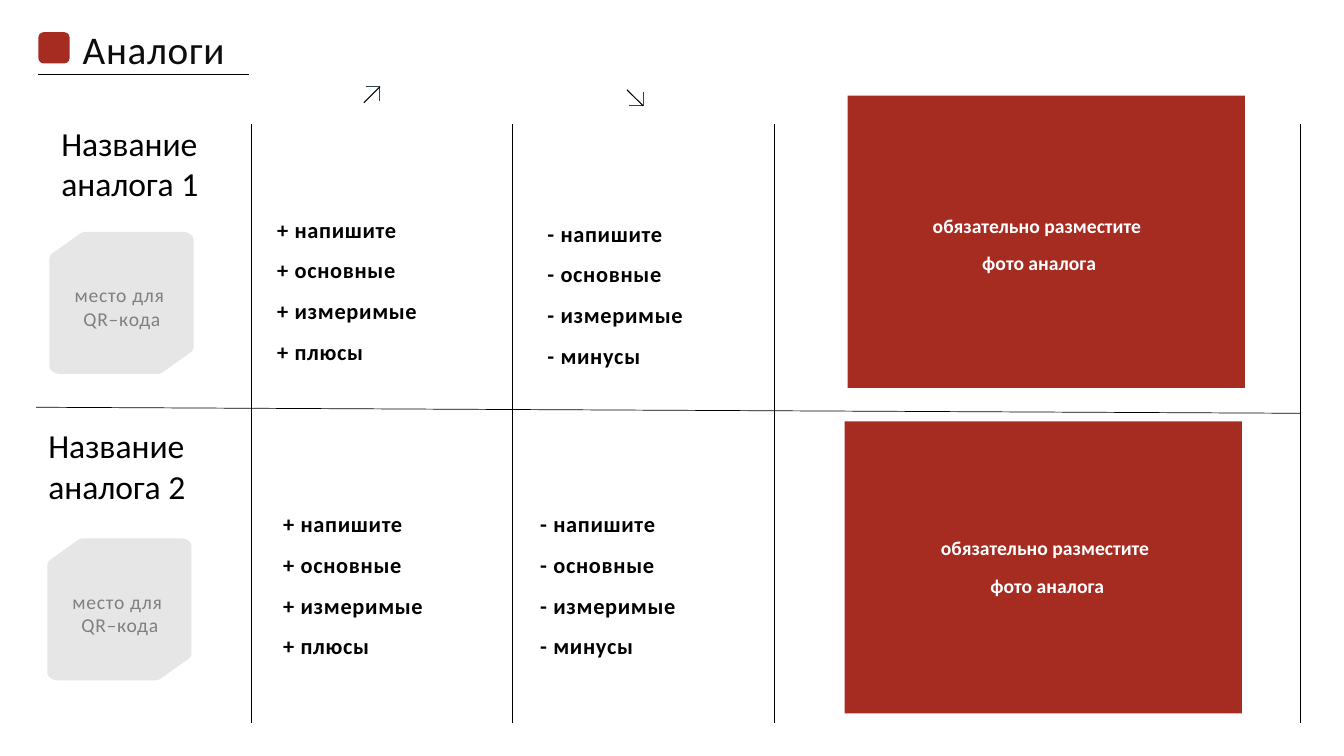
from pptx import Presentation
from pptx.dml.color import RGBColor
from pptx.enum.shapes import MSO_CONNECTOR, MSO_SHAPE
from pptx.enum.text import MSO_ANCHOR, PP_ALIGN
from pptx.oxml.ns import qn
from pptx.util import Pt
from lxml import etree

RECT, ROUND = MSO_SHAPE.RECTANGLE, MSO_SHAPE.ROUNDED_RECTANGLE
LINE = MSO_CONNECTOR.STRAIGHT
TOP, MID = MSO_ANCHOR.TOP, MSO_ANCHOR.MIDDLE
LEFT, CENTER = PP_ALIGN.LEFT, PP_ALIGN.CENTER

FONT = "Calibri"
RED, GREY, BLACK, WHITE = "A62B21", "E6E6E6", "000000", "FFFFFF"
DIM, NAVY, INK = "808080", "28445D", "0D0D0D"

TITLE = "Аналоги"
PLUS = ["+ напишите", "+ основные", "+ измеримые", "+ плюсы"]
MINUS = ["- напишите", "- основные", "- измеримые", "- минусы"]
PHOTO = ["обязательно разместите ", "фото аналога"]
CODE = ["место для ", "QR–кода"]

ROWS = [
    {"name": "Название аналога 1", "head": (36.7, 43.9), "plus": (190.8, 150.5),
     "minus": (383.8, 153.4), "photo": (605.5, 68.4), "note": (601.2, 149),
     "code": (35.3, 165.6)},
    {"name": "Название аналога 2", "head": (27.4, 259.9), "plus": (195.1, 360.7),
     "minus": (378.7, 360.7), "photo": (603.4, 301), "note": (607, 379.4),
     "code": (33.8, 384.5)},
]

COLS = [179.3, 365.8, 553, 928.8]
RULES = [(x, 88.6, x, 516.2) for x in COLS]
RULES += [(928.8, 295.2, 25.9, 290.9), (27.4, 53.3, 177.8, 53.3)]
ARROWS = [
    ((259.9, 73.4, 271.4, 61.9), [(261.4, 61.9), (271.4, 61.9), (271.4, 72)]),
    ((447.8, 64.1, 459.4, 75.6), [(449.3, 75.6), (459.4, 75.6), (459.4, 65.5)]),
]

CARD = (103, 101.5)
BENDS = [
    [(103, 82), (103, 83.5), (102.3, 85), (101, 86)],
    [(82, 99.5), (80.6, 100.7), (79, 101.5), (77, 101.5)],
    [(8, 101.5), (3.6, 101.5), (0, 98.9), (0, 96)],
]

deck = Presentation()
deck.slide_width, deck.slide_height = Pt(960), Pt(540)
slide = deck.slides.add_slide(deck.slide_layouts[6])
shapes = slide.shapes


def color(code):
    return RGBColor.from_string(code)


def paint(shape, fill=None):
    shape.shadow.inherit = False
    shape.line.fill.background()
    if fill:
        shape.fill.solid()
        shape.fill.fore_color.rgb = color(fill)
    else:
        shape.fill.background()


def block(kind, x, y, w, h, fill=None):
    shape = shapes.add_shape(kind, Pt(x), Pt(y), Pt(w), Pt(h))
    paint(shape, fill)
    return shape


def write(shape, lines, size, tint, bold=False, track=0, gap=0, align=LEFT, anchor=TOP):
    frame = shape.text_frame
    frame.word_wrap = True
    frame.vertical_anchor = anchor
    for i, line in enumerate(lines):
        para = frame.add_paragraph() if i else frame.paragraphs[0]
        para.alignment = align
        para.space_before = Pt(gap)
        run = para.add_run()
        run.text = line
        font = run.font
        font.name, font.size, font.bold = FONT, Pt(size), bold
        font.color.rgb = color(tint)
        if track:
            font._element.set("spc", str(int(track * 100)))


def text(spot, size, lines, *args, **style):
    box = shapes.add_textbox(*map(Pt, spot + size))
    write(box, lines, *args, **style)


def rule(ends, width=0.5):
    line = shapes.add_connector(LINE, *map(Pt, ends))
    line.line.width = Pt(width)
    line.line.color.rgb = color(BLACK)
    etree.SubElement(line._element.spPr, qn("a:effectLst"))


def outline(points, close):
    spots = [(Pt(x), Pt(y)) for x, y in points]
    pen = shapes.build_freeform(*spots[0], scale=1.0)
    pen.add_line_segments(spots[1:], close=close)
    return pen.convert_to_shape()


def curve(bend, steps=6):
    for i in range(steps + 1):
        t = i / steps
        parts = [(1 - t) ** 3, 3 * t * (1 - t) ** 2, 3 * t * t * (1 - t), t ** 3]
        yield tuple(sum(k * p[axis] for k, p in zip(parts, bend)) for axis in (0, 1))


def card(left, top):
    half = [point for bend in BENDS for point in curve(bend)]
    turn = [(CARD[0] - x, CARD[1] - y) for x, y in half]
    shape = outline([(left + x, top + y) for x, y in half + turn], True)
    paint(shape, GREY)


for ends in RULES:
    rule(ends)

for shaft, tip in ARROWS:
    head = outline(tip, False)
    paint(head)
    head.line.color.rgb = color(NAVY)
    head.line.width = Pt(0.75)
    rule(shaft, 0.75)

block(ROUND, 27.4, 23, 22.3, 22.3, RED)
title = block(ROUND, 49, 24.5, 146.2, 20.9)
title.adjustments[0] = 0.5
write(title, [TITLE], 28, INK, track=0.5, anchor=MID)

for row in ROWS:
    text(row["head"], (125.3, 145.4), [row["name"]], 24, BLACK, anchor=MID)
    for key, lines in (("plus", PLUS), ("minus", MINUS)):
        text(row[key], (128.9, 113.8), lines, 16, BLACK, bold=True, track=0.5, gap=10)
    block(RECT, *row["photo"], 283.7, 208.7, RED)
    text(row["note"], (282.2, 67.7), PHOTO, 14, WHITE, bold=True, gap=10, align=CENTER)
    x, y = row["code"]
    card(x, y)
    text((x - 7.2, y + 33.1), (118.1, 41), CODE, 14, DIM, track=0.5, align=CENTER)

deck.save("out.pptx")
